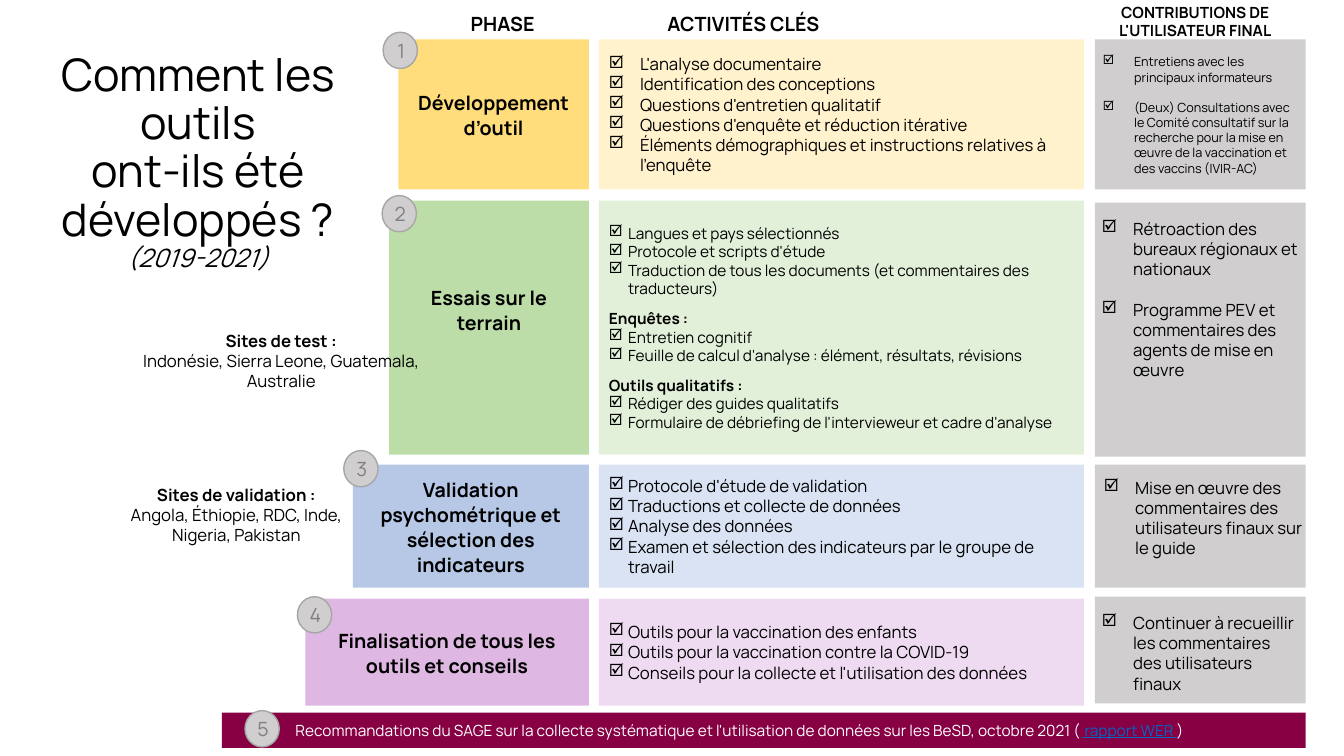
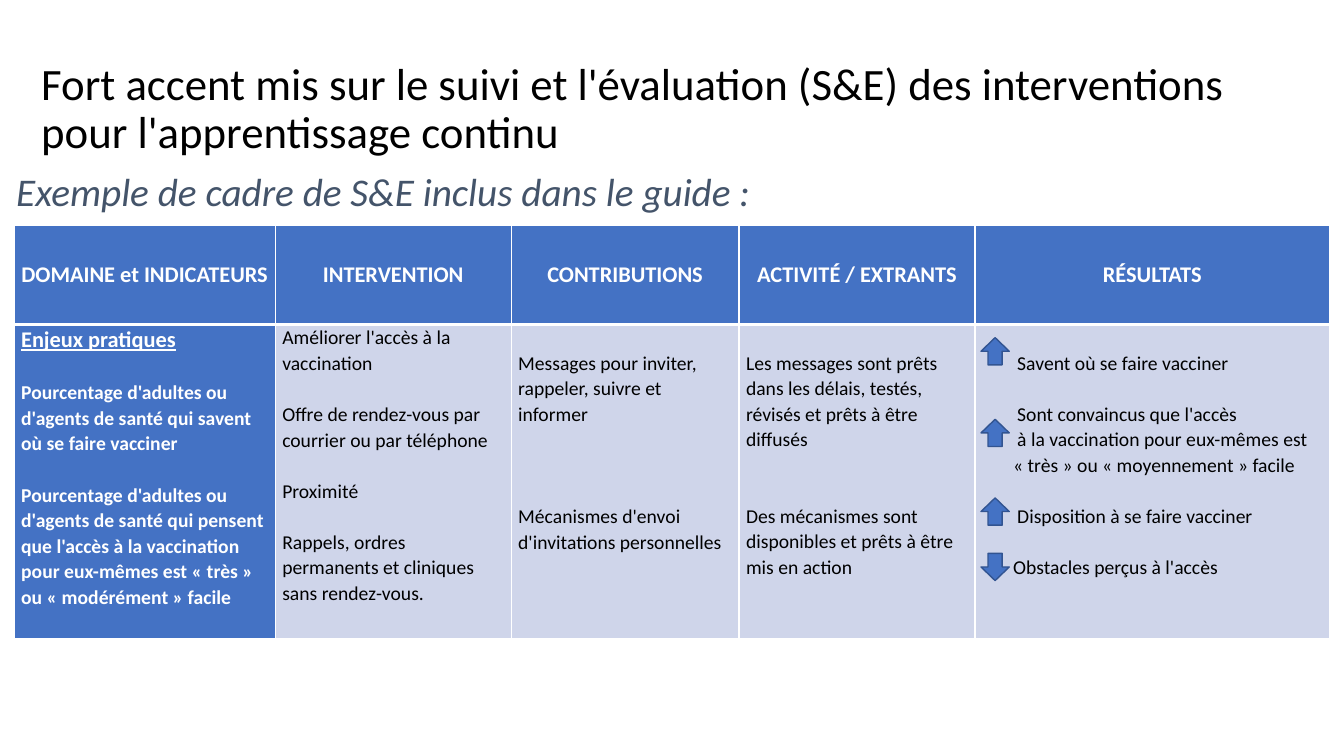
from dataclasses import dataclass

import lxml.etree
import pptx
import pptx.dml.color
import pptx.enum.shapes
import pptx.enum.text
import pptx.oxml.ns
import pptx.util

RGB = pptx.dml.color.RGBColor
SHAPE = pptx.enum.shapes.MSO_SHAPE
ALIGN = pptx.enum.text.PP_ALIGN
ANCHOR = pptx.enum.text.MSO_ANCHOR
qn = pptx.oxml.ns.qn

PX = 9144
BLACK, WHITE = RGB(0, 0, 0), RGB(255, 255, 255)
GREY, GREY_EDGE, GREY_TEXT = RGB(0xD0, 0xCE, 0xCE), RGB(0xA6, 0xA6, 0xA6), RGB(0x80, 0x80, 0x80)
BLUE, BLUE_EDGE, PALE_BLUE = RGB(0x44, 0x72, 0xC4), RGB(0x32, 0x54, 0x91), RGB(0xCF, 0xD5, 0xEA)
SLATE, LINK, BURGUNDY = RGB(0x44, 0x54, 0x6A), RGB(0x05, 0x63, 0xC1), RGB(0x86, 0x00, 0x43)
MANROPE, CALIBRI = "Manrope", "Calibri"
TITLE_SIZE, TITLE_SPACING = 32, 0.9
ROW_GAP = 18.3


@dataclass
class Style:
    """Look shared by the paragraphs of one text frame."""
    font: str = MANROPE
    size: int = 12
    color: RGB = BLACK
    bold: bool = False
    italic: bool = False
    align: ALIGN = ALIGN.LEFT
    spacing: float = 1.0


@dataclass
class Line:
    """One paragraph; text is a string or a list of (text, colour, underline)."""
    text: object
    before: float = 0
    check: int = 0
    indent: int = 0
    bold: bool = None
    italic: bool = None
    underline: bool = False
    size: int = None


@dataclass
class Phase:
    """One row of the process diagram."""
    name: str
    left: int
    top: int
    height: int
    dark: RGB
    light: RGB
    badge: tuple
    activities: list
    size: int
    note_top: int
    note_box: tuple
    notes: list
    note_size: int = 12
    lift: int = 0


def checks(items, indent, gap=0):
    """Turn strings into ticked lines, with a gap between them."""
    return [Line(item, check=indent, before=gap if i else 0) for i, item in enumerate(items)]


PHASES = [
    Phase("Développement d’outil", 395, 39, 149, RGB(0xFF, 0xDD, 0x7D), RGB(0xFF, 0xF2, 0xCC), (380, 32),
          checks(["L'analyse documentaire", "Identification des conceptions",
                  "Questions d'entretien qualitatif", "Questions d'enquête et réduction itérative",
                  "Éléments démographiques et instructions relatives à l'enquête"], 31), 12,
          39, (1084, 49, 216, 162),
          checks(["Entretiens avec les principaux informateurs",
                  "(Deux) Consultations avec le Comité consultatif sur la recherche pour la mise en œuvre "
                  "de la vaccination et des vaccins (IVIR-AC)"], 31, 10.8), note_size=9),
    Phase("Essais sur le terrain", 386, 199, 252, RGB(0xBC, 0xDD, 0xA7), RGB(0xE2, 0xF0, 0xD9), (379, 194),
          checks(["Langues et pays sélectionnés", "Protocole et scripts d'étude",
                  "Traduction de tous les documents (et commentaires des traducteurs)"], 19)
          + [Line("Enquêtes :", before=8, bold=True)]
          + checks(["Entretien cognitif", "Feuille de calcul d'analyse : élément, résultats, révisions"], 19)
          + [Line("Outils qualitatifs :", before=8, bold=True)]
          + checks(["Rédiger des guides qualitatifs",
                    "Formulaire de débriefing de l'intervieweur et cadre d'analyse"], 19), 11,
          201, (1083, 212, 219, 172),
          checks(["Rétroaction des bureaux régionaux et nationaux",
                  "Programme PEV et commentaires des agents de mise en œuvre"], 31, 14.4), lift=36),
    Phase("Validation psychométrique et sélection des indicateurs", 350, 461, 122,
          RGB(0xB7, 0xC8, 0xE7), RGB(0xDA, 0xE3, 0xF3), (341, 447),
          checks(["Protocole d'étude de validation", "Traductions et collecte de données",
                  "Analyse des données",
                  "Examen et sélection des indicateurs par le groupe de travail"], 19), 12,
          461, (1085, 469, 218, 71),
          checks(["Mise en œuvre des commentaires des utilisateurs finaux sur le guide"], 31)),
    Phase("Finalisation de tous les outils et conseils", 303, 594, 106,
          RGB(0xDE, 0xB8, 0xE2), RGB(0xEF, 0xDB, 0xF1), (295, 592),
          checks(["Outils pour la vaccination des enfants", "Outils pour la vaccination contre la COVID-19",
                  "Conseils pour la collecte et l'utilisation des données"], 19), 12,
          592, (1083, 603, 218, 50),
          checks(["Continuer à recueillir les commentaires des utilisateurs finaux"], 31)),
]

SITES = [
    ((122, 323, 314, 71), "Sites de test :", "Indonésie, Sierra Leone, Guatemala, Australie"),
    ((112, 476, 245, 71), "Sites de validation :", "Angola, Éthiopie, RDC, Inde, Nigeria, Pakistan"),
]

FRAMEWORK_WIDTHS = [259, 234, 226, 234, 352]
FRAMEWORK_HEADS = ["DOMAINE et INDICATEURS", "INTERVENTION", "CONTRIBUTIONS",
                   "ACTIVITÉ / EXTRANTS", "RÉSULTATS"]
FRAMEWORK_CELLS = [
    [Line("Enjeux pratiques", underline=True, size=16),
     Line("Pourcentage d'adultes ou d'agents de santé qui savent où se faire vacciner", before=ROW_GAP),
     Line("Pourcentage d'adultes ou d'agents de santé qui pensent que l'accès à la vaccination pour "
          "eux-mêmes est « très » ou « modérément » facile", before=ROW_GAP)],
    [Line("Améliorer l'accès à la vaccination"),
     Line("Offre de rendez-vous par courrier ou par téléphone", before=ROW_GAP),
     Line("Proximité", before=ROW_GAP),
     Line("Rappels, ordres permanents et cliniques sans rendez-vous.", before=ROW_GAP)],
    [Line("Messages pour inviter, rappeler, suivre et informer"),
     Line("Mécanismes d'envoi d'invitations personnelles", before=3 * ROW_GAP)],
    [Line("Les messages sont prêts dans les délais, testés, révisés et prêts à être diffusés"),
     Line("Des mécanismes sont disponibles et prêts à être mis en action", before=2 * ROW_GAP)],
    [Line("Savent où se faire vacciner", indent=35),
     Line("Sont convaincus que l'accès", before=ROW_GAP, indent=35),
     Line("à la vaccination pour eux-mêmes est", indent=35),
     Line("« très » ou « moyennement » facile", indent=31),
     Line("Disposition à se faire vacciner", before=ROW_GAP, indent=35),
     Line("Obstacles perçus à l'accès", before=ROW_GAP, indent=31)],
]
CELL_TOPS = [0, 0, 25, 25, 25]
TRENDS = [(335, SHAPE.UP_ARROW), (416, SHAPE.UP_ARROW), (494, SHAPE.UP_ARROW), (549, SHAPE.DOWN_ARROW)]


def px(*lengths):
    """Turn px lengths into EMU."""
    return [length * PX for length in lengths]


def indent_line(paragraph, line):
    """Set the left indent and the tick mark of a paragraph."""
    properties = paragraph._p.get_or_add_pPr()
    if line.check:
        properties.set("marL", str(line.check * PX))
        properties.set("indent", str(-line.check * PX))
        lxml.etree.SubElement(properties, qn("a:buChar")).set("char", "☑")
    elif line.indent:
        properties.set("marL", str(line.indent * PX))


def write(frame, lines, style):
    """Fill a text frame run by run."""
    for i, line in enumerate(lines):
        paragraph = frame.add_paragraph() if i else frame.paragraphs[0]
        indent_line(paragraph, line)
        paragraph.alignment = style.align
        paragraph.line_spacing = style.spacing
        if line.before:
            paragraph.space_before = pptx.util.Pt(line.before)
        runs = [(line.text, style.color, line.underline)] if isinstance(line.text, str) else line.text
        for text, color, underline in runs:
            if text == "\n":
                paragraph.add_line_break()
                continue
            run = paragraph.add_run()
            run.text = text
            font = run.font
            font.name = style.font
            font.size = pptx.util.Pt(line.size or style.size)
            font.bold = style.bold if line.bold is None else line.bold
            font.italic = style.italic if line.italic is None else line.italic
            font.underline = underline
            font.color.rgb = color


def set_margins(holder, left, top, right, bottom):
    """Set the four inner margins of a frame or cell."""
    holder.margin_left, holder.margin_top, holder.margin_right, holder.margin_bottom = px(
        left, top, right, bottom)


def add_text(slide, box, lines, style, anchor=ANCHOR.TOP, margins=(10, 5, 10, 5)):
    """Add a wrapping text box."""
    frame = slide.shapes.add_textbox(*px(*box)).text_frame
    frame.word_wrap = True
    frame.vertical_anchor = anchor
    set_margins(frame, *margins)
    write(frame, lines, style)


def add_title(slide, box, lines, font, align=ALIGN.LEFT):
    """Add a slide title in the shared title style."""
    add_text(slide, box, lines, Style(font, TITLE_SIZE, align=align, spacing=TITLE_SPACING))


def add_block(slide, kind, box, fill, edge=None, lines=(), style=Style(), margins=(10, 5, 10, 5)):
    """Add a filled shape, with text centred in height."""
    block = slide.shapes.add_shape(kind, *px(*box))
    block.shadow.inherit = False
    block.fill.solid()
    block.fill.fore_color.rgb = fill
    if edge is None:
        block.line.fill.background()
    else:
        block.line.color.rgb = edge
        block.line.width = pptx.util.Pt(1)
    frame = block.text_frame
    frame.word_wrap = True
    frame.vertical_anchor = ANCHOR.MIDDLE
    set_margins(frame, *margins)
    write(frame, lines, style)


def add_badge(slide, number, left, top):
    """Add a numbered grey disc."""
    add_block(slide, SHAPE.OVAL, (left, top, 34, 36), GREY, GREY_EDGE, [Line(str(number))],
              Style(size=14, color=GREY_TEXT, align=ALIGN.CENTER), (2, 0, 0, 0))


def add_phase(slide, number, phase):
    """Add one phase with its activities, user contributions and badge."""
    add_block(slide, SHAPE.RECTANGLE, (594, phase.top, 481, phase.height), phase.light,
              lines=phase.activities, style=Style(size=phase.size))
    add_block(slide, SHAPE.RECTANGLE, (phase.left, phase.top, 584 - phase.left, phase.height), phase.dark,
              lines=[Line(phase.name)], style=Style(size=14, bold=True, align=ALIGN.CENTER, spacing=1.07),
              margins=(10, 5, 10, 5 + phase.lift))
    add_block(slide, SHAPE.RECTANGLE, (1086, phase.note_top, 209, phase.height), GREY)
    add_text(slide, phase.note_box, phase.notes, Style(size=phase.note_size))
    add_badge(slide, number, *phase.badge)


def border_cell(cell, bottom_width):
    """Draw white borders around a table cell."""
    properties = cell._tc.get_or_add_tcPr()
    for i, (side, width) in enumerate([("lnL", 1), ("lnR", 1), ("lnT", 1), ("lnB", bottom_width)]):
        border = lxml.etree.Element(qn("a:" + side), w=str(pptx.util.Pt(width)))
        fill = lxml.etree.SubElement(border, qn("a:solidFill"))
        lxml.etree.SubElement(fill, qn("a:srgbClr")).set("val", str(WHITE))
        properties.insert(i, border)


def fill_cell(cell, lines, style, fill, top=0, anchor=ANCHOR.TOP, bottom_width=1):
    """Fill, border and write one table cell."""
    cell.fill.solid()
    cell.fill.fore_color.rgb = fill
    cell.vertical_anchor = anchor
    set_margins(cell, 7, top, 7, 0)
    border_cell(cell, bottom_width)
    write(cell.text_frame, lines, style)


def add_framework(slide):
    """Add the monitoring and evaluation table."""
    table = slide.shapes.add_table(2, 5, *px(14, 224, sum(FRAMEWORK_WIDTHS), 410)).table
    for row, height in zip(table.rows, px(98, 312)):
        row.height = height
    heading = Style(CALIBRI, 16, WHITE, bold=True, align=ALIGN.CENTER)
    for i, width in enumerate(px(*FRAMEWORK_WIDTHS)):
        table.columns[i].width = width
        fill_cell(table.cell(0, i), [Line(FRAMEWORK_HEADS[i])], heading, BLUE,
                  anchor=ANCHOR.MIDDLE, bottom_width=3)
        is_domain = i == 0
        body = Style(CALIBRI, 14, WHITE if is_domain else BLACK, bold=is_domain, spacing=1.07)
        fill_cell(table.cell(1, i), FRAMEWORK_CELLS[i], body, BLUE if is_domain else PALE_BLUE, CELL_TOPS[i])


def build_process(slide):
    """Build the slide on how the tools were developed."""
    add_title(slide, (-2, 47, 397, 203),
              [Line("Comment les outils"), Line("ont-ils été développés ?"),
               Line("(2019-2021)", size=18, italic=True)], MANROPE, ALIGN.CENTER)
    heading = Style(size=14, bold=True)
    add_text(slide, (457, 7, 105, 34), [Line("PHASE")], heading)
    add_text(slide, (652, 7, 226, 34), [Line("ACTIVITÉS CLÉS")], heading)
    add_text(slide, (1056, -2, 259, 47), [Line("CONTRIBUTIONS DE L'UTILISATEUR FINAL")],
             Style(size=11, bold=True, align=ALIGN.CENTER))
    for number, phase in enumerate(PHASES, 1):
        add_phase(slide, number, phase)
    for box, label, countries in SITES:
        add_text(slide, box, [Line(label, bold=True), Line(countries)], Style(align=ALIGN.CENTER))
    recommendation = Line([
        ("Recommandations du SAGE sur la collecte systématique et l'utilisation de données sur les BeSD, "
         "octobre 2021 (", WHITE, False), (" rapport WER ", LINK, True), (")", WHITE, False)])
    add_block(slide, SHAPE.RECTANGLE, (220, 707, 1075, 35), BURGUNDY, lines=[recommendation],
              style=Style(size=11), margins=(73, 5, 10, 5))
    add_badge(slide, len(PHASES) + 1, 243, 705)


def build_monitoring(slide):
    """Build the slide on monitoring and evaluation."""
    add_title(slide, (31, 56, 1282, 49),
              [Line([("Fort accent mis sur le suivi et l'évaluation (S&E) des interventions", BLACK, False),
                     ("\n", BLACK, False), ("pour l'apprentissage continu", BLACK, False)])], CALIBRI)
    add_framework(slide)
    for top, arrow in TRENDS:
        add_block(slide, arrow, (973, top, 28, 27), BLUE, BLUE_EDGE)
    add_text(slide, (14, 166, 1232, 47), [Line("Exemple de cadre de S&E inclus dans le guide :")],
             Style(CALIBRI, 28, SLATE, italic=True, spacing=TITLE_SPACING), ANCHOR.BOTTOM, (2, 0, 39, 0))


def main():
    """Build and save the presentation."""
    deck = pptx.Presentation()
    deck.slide_width, deck.slide_height = px(1333, 750)
    for build in (build_process, build_monitoring):
        build(deck.slides.add_slide(deck.slide_layouts[6]))
    deck.save("out.pptx")


if __name__ == "__main__":
    main()
